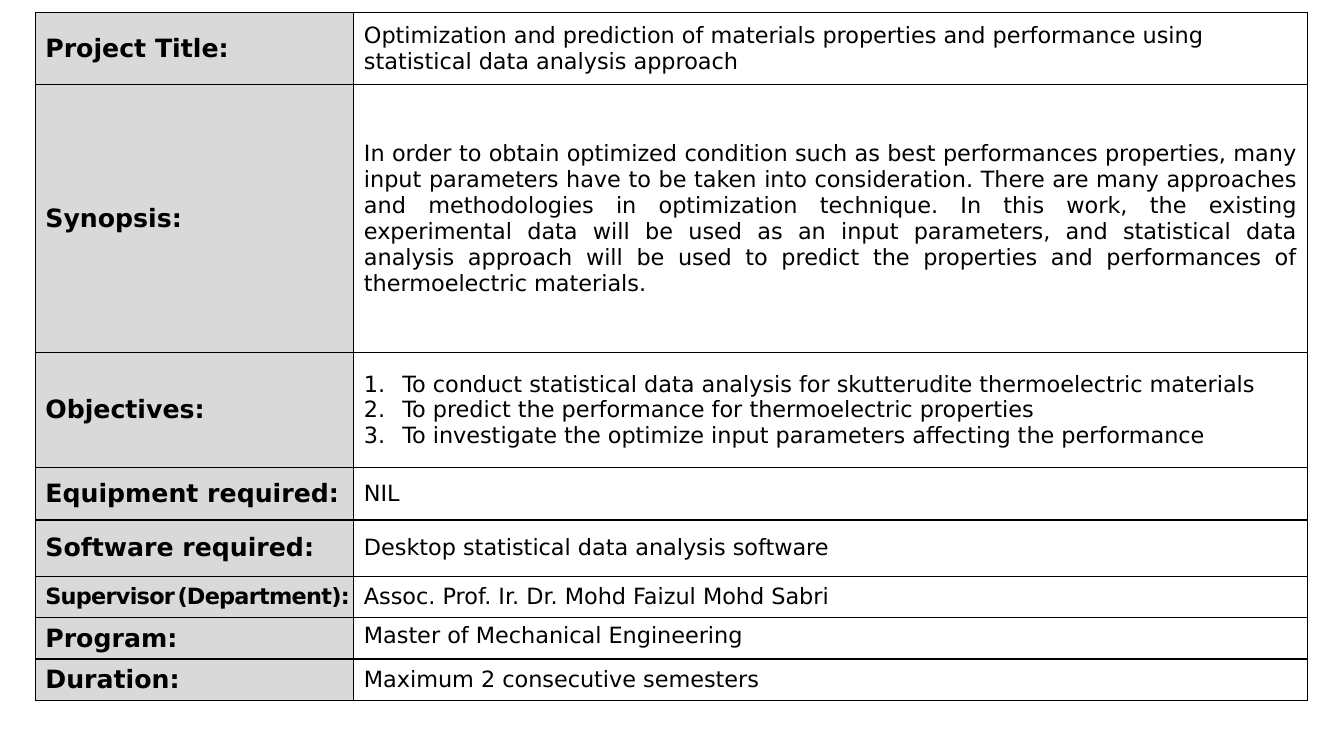
import pptx
import pptx.dml.color
import pptx.enum.text
import pptx.oxml.ns
import pptx.util
from lxml import etree

FONT = "DejaVu Sans"
COLORS = {"text": "000000", "border": "000000", "label": "D9D9D9"}
LABEL_SIZE, BODY_SIZE = 18, 16
LEFT, TOP = 0.35, 0.12
COLUMN_WIDTHS = [3.16, 9.46]
LIST_INDENT = 0.38

# label, paragraphs, row height, format of the right-hand cell
ROWS = [
    ("Project Title:",
     ["Optimization and prediction of materials properties and performance using "
      "statistical data analysis approach"], 0.72, {}),
    ("Synopsis:",
     ["In order to obtain optimized condition such as best performances properties, many "
      "input parameters have to be taken into consideration. There are many approaches and "
      "methodologies in optimization technique. In this work, the existing experimental data "
      "will be used as an input parameters, and statistical data analysis approach will be "
      "used to predict the properties and performances of thermoelectric materials."],
     2.66, {"align": pptx.enum.text.PP_ALIGN.JUSTIFY}),
    ("Objectives:",
     ["To conduct statistical data analysis for skutterudite thermoelectric materials",
      "To predict the performance for thermoelectric properties",
      "To investigate the optimize input parameters affecting the performance"],
     1.14, {"numbered": True}),
    ("Equipment required:", ["NIL"], 0.52, {}),
    ("Software required:", ["Desktop statistical data analysis software"], 0.56, {}),
    ([("Supervisor", 16), (" ", 5), ("(Department):", 16)],
     ["Assoc. Prof. Ir. Dr. Mohd Faizul Mohd Sabri"], 0.41, {}),
    ("Program:", ["Master of Mechanical Engineering"], 0.41,
     {"anchor": pptx.enum.text.MSO_ANCHOR.TOP}),
    ("Duration:", ["Maximum 2 consecutive semesters"], 0.41, {}),
]


def rgb(name):
    return pptx.dml.color.RGBColor.from_string(COLORS[name])


def add_child(parent, tag, **attributes):
    child = etree.SubElement(parent, pptx.oxml.ns.qn(tag))
    for name, value in attributes.items():
        child.set(name, str(value))
    return child


def draw_borders(cell):
    properties = cell._tc.get_or_add_tcPr()
    for side in ("a:lnL", "a:lnR", "a:lnT", "a:lnB"):
        line = add_child(properties, side, w=pptx.util.Pt(1))
        add_child(add_child(line, "a:solidFill"), "a:srgbClr", val=COLORS["border"])


def number_paragraph(para):
    properties = para._p.get_or_add_pPr()
    indent = pptx.util.Inches(LIST_INDENT)
    properties.set("marL", str(indent))
    properties.set("indent", str(-indent))
    add_child(properties, "a:buFont", typeface="+mj-lt")
    add_child(properties, "a:buAutoNum", type="arabicPeriod")


def write_cell(cell, paragraphs, bold=False, spacing=0, align=None, numbered=False,
               anchor=pptx.enum.text.MSO_ANCHOR.MIDDLE):
    """Fill a cell with paragraphs, each a list of (text, size) spans."""
    cell.vertical_anchor = anchor
    frame = cell.text_frame
    for index, spans in enumerate(paragraphs):
        para = frame.add_paragraph() if index else frame.paragraphs[0]
        if numbered:
            number_paragraph(para)
        if align is not None:
            para.alignment = align
        for text, size in spans:
            span = para.add_run()
            span.text = text
            span.font.name = FONT
            span.font.size = pptx.util.Pt(size)
            span.font.bold = bold
            span.font.color.rgb = rgb("text")
            if spacing:
                span.font._element.set("spc", str(int(spacing * 100)))


def main():
    deck = pptx.Presentation()
    deck.slide_width = pptx.util.Inches(13.33)
    deck.slide_height = pptx.util.Inches(7.5)
    page = deck.slides.add_slide(deck.slide_layouts[6])

    heights = [height for _, _, height, _ in ROWS]
    table = page.shapes.add_table(
        len(ROWS), len(COLUMN_WIDTHS),
        *map(pptx.util.Inches, (LEFT, TOP, sum(COLUMN_WIDTHS), sum(heights)))).table
    table.first_row = table.horz_banding = False
    for column, width in zip(table.columns, COLUMN_WIDTHS):
        column.width = pptx.util.Inches(width)

    for index, (label, texts, height, style) in enumerate(ROWS):
        table.rows[index].height = pptx.util.Inches(height)
        label_cell, body_cell = table.cell(index, 0), table.cell(index, 1)
        for cell in (label_cell, body_cell):
            draw_borders(cell)
        label_cell.fill.solid()
        label_cell.fill.fore_color.rgb = rgb("label")
        body_cell.fill.background()

        if isinstance(label, str):
            write_cell(label_cell, [[(label, LABEL_SIZE)]], bold=True)
        else:
            label_cell.margin_right = 0
            write_cell(label_cell, [label], bold=True, spacing=-0.5)
        write_cell(body_cell, [[(text, BODY_SIZE)] for text in texts], **style)

    deck.save("out.pptx")


if __name__ == "__main__":
    main()
